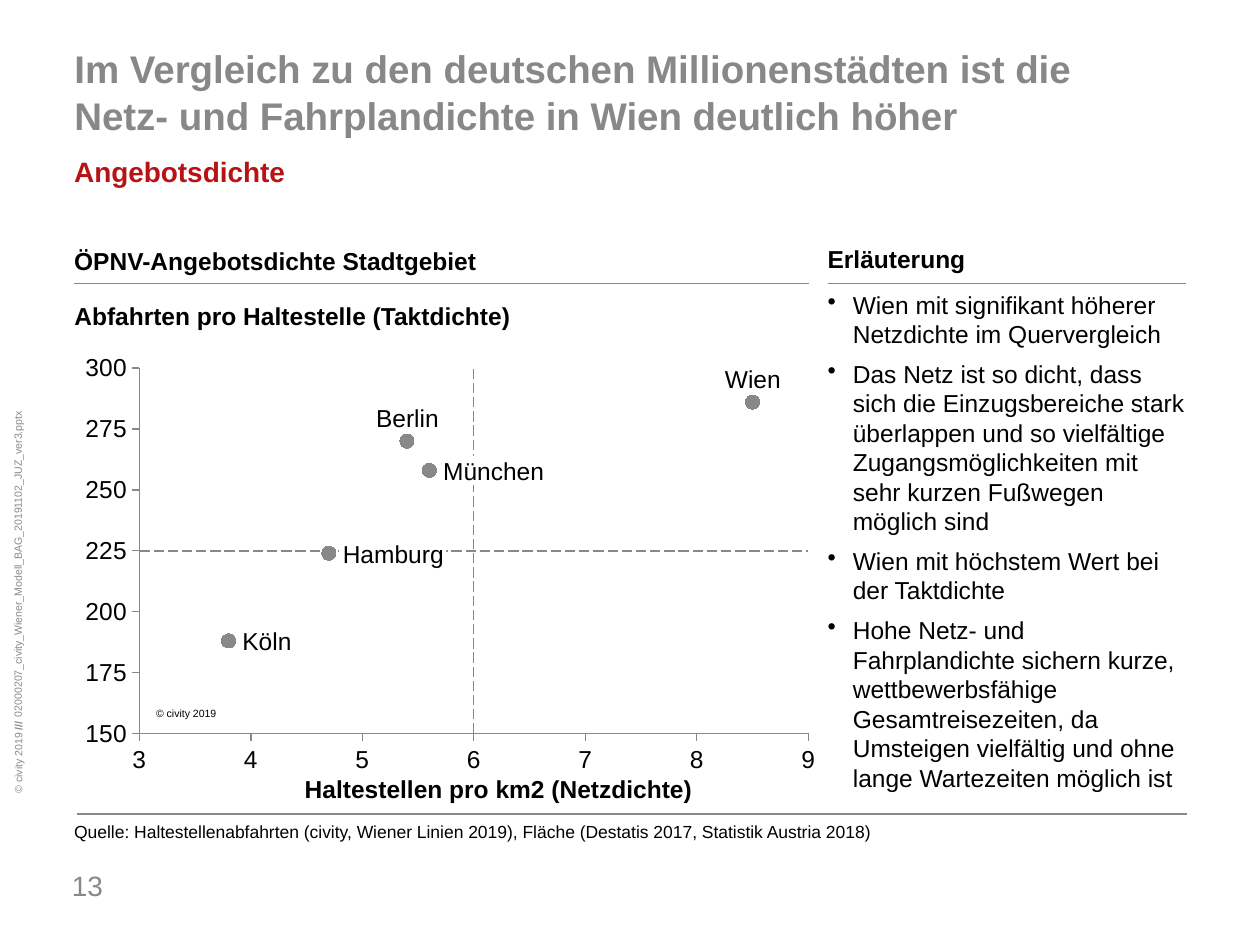
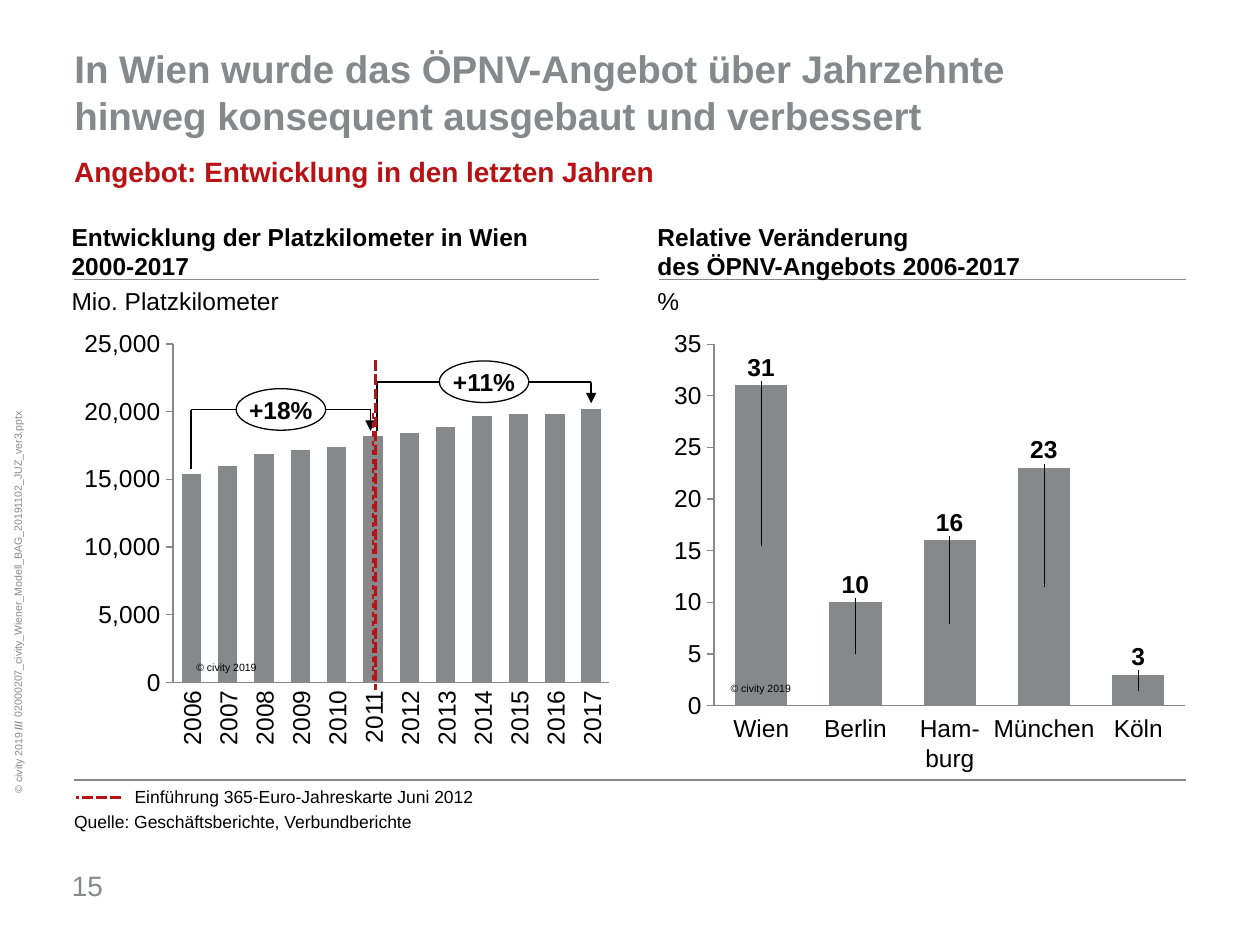
from dataclasses import dataclass
from lxml.etree import SubElement
from pptx import Presentation
from pptx.chart.data import CategoryChartData, XyChartData
from pptx.dml.color import RGBColor
from pptx.enum.chart import (XL_CHART_TYPE, XL_LABEL_POSITION, XL_MARKER_STYLE,
                             XL_TICK_LABEL_POSITION, XL_TICK_MARK)
from pptx.enum.dml import MSO_LINE
from pptx.enum.shapes import MSO_CONNECTOR, MSO_SHAPE
from pptx.enum.text import MSO_ANCHOR, MSO_AUTO_SIZE, PP_ALIGN
from pptx.oxml import parse_xml
from pptx.oxml.ns import nsdecls, qn
from pptx.util import Inches, Pt


@dataclass(frozen=True)
class Theme:
    font: str = "Arial"
    grey: RGBColor = RGBColor(0x86, 0x88, 0x89)
    red: RGBColor = RGBColor(0xB9, 0x12, 0x15)
    black: RGBColor = RGBColor(0, 0, 0)
    white: RGBColor = RGBColor(255, 255, 255)
    title: int = 22
    subtitle: int = 16
    body: int = 14
    note: int = 10
    tiny: int = 6
    hairline: float = 0.75


@dataclass(frozen=True)
class Box:
    """A region on the grid of 10 columns by 7.5 rows."""
    x: float
    y: float
    w: float
    h: float

    def sub(self, dx, dy, w, h):
        return Box(self.x + dx, self.y + dy, w, h)

    def share(self, fx, fy, fw, fh):
        return self.sub(fx * self.w, fy * self.h, fw * self.w, fh * self.h)

    def emu(self):
        return [Inches(v) for v in (self.x, self.y, self.w, self.h)]


T = Theme()
COLS, ROWS = 10, 7.5
SLIDE = Box(0, 0, COLS, ROWS)
COPYRIGHT = "© civity 2019"
FILE_NAME = "02000207_civity_Wiener_Modell_BAG_20191102_JUZ_ver3.pptx"
PAD = (0.1, 0.05)
NO_PAD = (0, 0)
LABEL_H = 0.23


def add_run(p, text, size=T.body, color=T.black, bold=False):
    for i, line in enumerate(text.split("\n")):
        if i:
            p.add_line_break()
        r = p.add_run()
        r.text = line
        r.font.name, r.font.size, r.font.bold = T.font, Pt(size), bold
        r.font.color.rgb = color


def set_frame(tf, pad=PAD, wrap=True, anchor=MSO_ANCHOR.TOP):
    tf.word_wrap, tf.auto_size, tf.vertical_anchor = wrap, MSO_AUTO_SIZE.NONE, anchor
    tf.margin_left = tf.margin_right = Inches(pad[0])
    tf.margin_top = tf.margin_bottom = Inches(pad[1])


def add_text(s, box, text, align=PP_ALIGN.LEFT, pad=PAD, wrap=True,
             anchor=MSO_ANCHOR.TOP, **font):
    sp = s.shapes.add_textbox(*box.emu())
    set_frame(sp.text_frame, pad, wrap, anchor)
    p = sp.text_frame.paragraphs[0]
    p.alignment = align
    add_run(p, text, **font)
    return sp


def add_line(s, start, end, color=T.grey, width=T.hairline, dash=None, arrow=False):
    line = s.shapes.add_connector(MSO_CONNECTOR.STRAIGHT,
                                  *[Inches(v) for v in (*start, *end)])
    line.line.color.rgb, line.line.width = color, Pt(width)
    if dash:
        line.line.dash_style = dash
    if arrow:
        SubElement(line.get_or_add_ln(), qn("a:tailEnd"), type="triangle")
    SubElement(line.element.spPr, qn("a:effectLst"))


def add_rule(s, x, y, w):
    add_line(s, (x, y), (x + w, y))


def add_frame(prs, title, subtitle, page):
    """Add a slide with the title, subtitle, page number and margin note all slides share."""
    s = prs.slides.add_slide(prs.slide_layouts[5])
    sp = s.shapes.title
    sp.left, sp.top, sp.width, sp.height = SLIDE.sub(0.49, 0.31, 8.92, 0.71).emu()
    set_frame(sp.text_frame)
    p = sp.text_frame.paragraphs[0]
    p.alignment = PP_ALIGN.LEFT
    add_run(p, title, T.title, T.grey, True)
    add_text(s, SLIDE.sub(0.49, 1.18, 7.89, 0.32), subtitle,
             size=T.subtitle, color=T.red, bold=True)
    add_text(s, SLIDE.sub(0.57, 6.89, 0.44, 0.27), page, pad=NO_PAD, wrap=False,
             anchor=MSO_ANCHOR.MIDDLE, size=T.subtitle, color=T.grey)
    margin = dict(pad=NO_PAD, size=T.tiny, color=T.grey)
    file_note = add_text(s, SLIDE.sub(-1.85, 3.65, 3.98, 0.1), FILE_NAME, **margin)
    owner = add_text(s, SLIDE.sub(-0.18, 6, 0.65, 0.1), COPYRIGHT, PP_ALIGN.RIGHT, **margin)
    add_run(owner.text_frame.paragraphs[0], " ///", T.tiny, T.grey, True)
    file_note.rotation = owner.rotation = 270
    return s


def add_source(s, y, text):
    add_text(s, Box(0.49, y, 8.93, 0.27), text, size=T.note)


def add_copyright(s, x, y):
    add_text(s, Box(x, y, 0.69, 0.2), COPYRIGHT, wrap=False, size=T.tiny)


def style_axis(axis, scale=None, number_format=None):
    """Style an axis; without a scale (min, max, step) it is a bare line."""
    axis.has_major_gridlines = False
    axis.format.line.color.rgb, axis.format.line.width = T.grey, Pt(T.hairline)
    axis.minor_tick_mark = XL_TICK_MARK.NONE
    if scale is None:
        axis.major_tick_mark = XL_TICK_MARK.NONE
        axis.tick_label_position = XL_TICK_LABEL_POSITION.NONE
        return
    axis.major_tick_mark = XL_TICK_MARK.OUTSIDE
    axis.minimum_scale, axis.maximum_scale, axis.major_unit = scale
    labels = axis.tick_labels
    labels.number_format, labels.number_format_is_linked = number_format, False
    labels.font.size, labels.font.name = Pt(T.body), T.font
    labels.font.color.rgb = T.black


def manual_layout(**values):
    parts = "".join(f'<c:{k} val="{v}"/>' for k, v in values.items())
    return parse_xml(f'<c:layout {nsdecls("c")}><c:manualLayout>{parts}'
                     '</c:manualLayout></c:layout>')


def add_chart(s, box, kind, data, inner):
    """Add a plain chart whose plot area takes the shares in inner; return it and that area."""
    chart = s.shapes.add_chart(kind, *box.emu(), data).chart
    chart.has_legend = chart.has_title = False
    chart.font.name, chart.font.size = T.font, Pt(T.note)
    chart.font.color.rgb = T.black
    area = chart.element.find(".//" + qn("c:plotArea"))
    for old in area.findall(qn("c:layout")):
        area.remove(old)
    x, y, w, h = inner
    area.insert(0, manual_layout(layoutTarget="inner", xMode="edge", yMode="edge",
                                 x=x, y=y, w=w, h=h))
    return chart, box.share(*inner)


def add_columns(s, box, values, scale, gap, inner):
    data = CategoryChartData()
    data.categories = [str(i + 1) for i in range(len(values))]
    data.add_series("Series 1", values)
    chart, plot_box = add_chart(s, box, XL_CHART_TYPE.COLUMN_STACKED, data, inner)
    style_axis(chart.category_axis)
    style_axis(chart.value_axis, scale, '#,##0;"-"#,##0')
    plot = chart.plots[0]
    plot.gap_width, plot.overlap, plot.vary_by_categories = gap, 100, False
    fill = plot.series[0].format.fill
    fill.solid()
    fill.fore_color.rgb = T.grey
    step = plot_box.w / len(values)
    centres = [plot_box.x + step * (i + 0.5) for i in range(len(values))]
    return chart, centres


def label_above_columns(chart, values, top, plot_share):
    """Lift each value label from the middle of its column to just above it."""
    for i, value in enumerate(values):
        label = chart.plots[0].series[0].points[i].data_label
        label.position = XL_LABEL_POSITION.CENTER
        label.font.size, label.font.bold, label.font.name = Pt(T.body), True, T.font
        label.font.color.rgb = T.black
        lift = value / top * plot_share / 2 + 0.045
        dlbl = chart.element.findall(".//" + qn("c:dLbl"))[i]
        dlbl.insert(1, manual_layout(x=0, y=round(-lift, 3)))


def add_density_chart(s, box):
    """Scatter of network and timetable density, with its headings, guides and city names."""
    cities = [("München", 5.6, 258, 0.85, False), ("Wien", 8.5, 286, 0.5, True),
              ("Berlin", 5.4, 270, 0.55, True), ("Köln", 3.8, 188, 0.44, False),
              ("Hamburg", 4.7, 224, 0.85, False)]
    x_scale, y_scale = (3, 9, 1), (150, 300, 25)
    data = XyChartData()
    series = data.add_series("Series 1")
    for _, x, y, _, _ in cities:
        series.add_data_point(x, y)
    chart, plot = add_chart(s, box.sub(0, 0.88, 6.16, 3.45), XL_CHART_TYPE.XY_SCATTER,
                            data, (0.1, 0.041, 0.862, 0.841))
    style_axis(chart.category_axis, x_scale, '0;"-"0')
    style_axis(chart.value_axis, y_scale, '0;"-"0')
    chart.plots[0].vary_by_categories = False
    dots = chart.plots[0].series[0]
    dots.smooth = False
    dots.format.line.fill.background()
    dots.marker.style, dots.marker.size = XL_MARKER_STYLE.CIRCLE, 8
    dots.marker.format.fill.solid()
    dots.marker.format.fill.fore_color.rgb = T.grey
    dots.marker.format.line.color.rgb = T.grey

    mid_x, mid_y = plot.x + plot.w / 2, plot.y + plot.h / 2
    add_line(s, (plot.x, mid_y), (plot.x + plot.w, mid_y), dash=MSO_LINE.LONG_DASH)
    add_line(s, (mid_x, plot.y + plot.h), (mid_x, plot.y), dash=MSO_LINE.LONG_DASH)
    for name, x, y, w, above in cities:
        px = plot.x + plot.w * (x - x_scale[0]) / (x_scale[1] - x_scale[0])
        py = plot.y + plot.h * (y_scale[1] - y) / (y_scale[1] - y_scale[0])
        spot = Box(px - w / 2, py - 0.3, w, LABEL_H) if above else \
            Box(px + 0.08, py - LABEL_H / 2, w, LABEL_H)
        sp = add_text(s, spot, name, pad=(0.03, 0), wrap=False, anchor=MSO_ANCHOR.MIDDLE)
        if not above:
            sp.fill.solid()
            sp.fill.fore_color.rgb = T.white

    add_text(s, box.sub(0, 0, 5.3, 0.39), "ÖPNV-Angebotsdichte Stadtgebiet", bold=True)
    add_rule(s, box.x + 0.1, box.y + 0.35, 5.83)
    add_text(s, box.sub(0.1, 0.49, 3.44, LABEL_H), "Abfahrten pro Haltestelle (Taktdichte)",
             pad=NO_PAD, wrap=False, anchor=MSO_ANCHOR.BOTTOM, bold=True)
    add_text(s, box.sub(1.83, 4.19, 3.29, 0.34), "Haltestellen pro km2 (Netzdichte)",
             wrap=False, bold=True)
    add_copyright(s, box.x + 0.65, box.y + 3.66)


def add_explanation(s, box, bullets):
    add_text(s, box.sub(0, -0.04, 2.94, 0.39), "Erläuterung",
             anchor=MSO_ANCHOR.MIDDLE, bold=True)
    add_rule(s, box.x + 0.1, box.y + 0.35, 2.84)
    sp = s.shapes.add_textbox(*box.sub(0, 0.35, box.w, box.h - 0.35).emu())
    tf = sp.text_frame
    set_frame(tf)
    for i, text in enumerate(bullets):
        p = tf.add_paragraph() if i else tf.paragraphs[0]
        ppr = p._p.get_or_add_pPr()
        ppr.set("marL", str(Inches(0.2)))
        ppr.set("indent", str(-Inches(0.2)))
        SubElement(ppr, qn("a:buChar"), char="•")
        if i:
            p.space_before = Pt(6)
        add_run(p, text)


def add_panel_heading(s, box, heading, unit):
    sp = add_text(s, box.sub(0, 0, 4.3, 0.85), heading, bold=True)
    p = sp.text_frame.add_paragraph()
    p.space_before = Pt(3)
    add_run(p, unit)


def add_growth(s, start, top, end, text):
    """Bracket from start up to top and down to end, with the growth in an ellipse."""
    corners = [start, (start[0], top), (end[0], top), end]
    for i in range(3):
        add_line(s, corners[i], corners[i + 1], T.black, 1, arrow=i == 2)
    w, h = 0.71, 0.33
    spot = Box((start[0] + end[0] - w) / 2, top - h / 2, w, h)
    sp = s.shapes.add_shape(MSO_SHAPE.OVAL, *spot.emu())
    sp.shadow.inherit = False
    sp.fill.solid()
    sp.fill.fore_color.rgb = T.white
    sp.line.color.rgb, sp.line.width = T.black, Pt(T.hairline)
    set_frame(sp.text_frame, NO_PAD, False, MSO_ANCHOR.MIDDLE)
    p = sp.text_frame.paragraphs[0]
    p.alignment = PP_ALIGN.CENTER
    add_run(p, text, bold=True)


def add_history(s, box):
    """Columns of seat kilometres by year, with growth brackets and the fare reform."""
    seat_km = [15400, 16000, 16900, 17200, 17400, 18200,
               18400, 18900, 19700, 19800, 19800, 20200]
    _, centres = add_columns(s, box.sub(0.02, 0.88, 4.44, 2.97), seat_km, (0, 25000, 5000),
                             87, (0.199, 0.047, 0.78, 0.905))
    for i, x in enumerate(centres):
        sp = add_text(s, Box(x - LABEL_H / 2, box.y + 3.77, LABEL_H, 0.43), str(2006 + i),
                      PP_ALIGN.RIGHT, NO_PAD, False, MSO_ANCHOR.MIDDLE)
        sp.element.txBody.bodyPr.set("vert", "vert270")
    first, reform, last = centres[0], centres[5], centres[-1]
    add_growth(s, (first, box.y + 2.01), box.y + 1.54, (reform - 0.02, box.y + 1.71), "+18%")
    add_growth(s, (reform + 0.03, box.y + 1.71), box.y + 1.32, (last, box.y + 1.49), "+11%")
    add_line(s, (reform, box.y + 3.69), (reform, box.y + 1.57), T.red, dash=MSO_LINE.DASH)
    add_rule(s, box.x + 0.12, box.y + 0.51, 4.16)
    add_panel_heading(s, box, "Entwicklung der Platzkilometer in Wien\n2000-2017",
                      "Mio. Platzkilometer")
    add_line(s, (reform + 0.02, box.y + 1.15), (reform + 0.02, box.y + 3.77),
             T.red, 2, MSO_LINE.SQUARE_DOT)
    add_copyright(s, box.x + 0.99, box.y + 3.49)


def add_change_by_city(s, box):
    changes = {"Wien": 31, "Berlin": 10, "Ham-\nburg": 16, "München": 23, "Köln": 3}
    values = list(changes.values())
    chart, centres = add_columns(s, box.sub(0.04, 0.88, 4.34, 3.15), values, (0, 35, 5),
                                 80, (0.117, 0.045, 0.862, 0.911))
    label_above_columns(chart, values, 35, 0.911)
    for x, city in zip(centres, changes):
        add_text(s, Box(x - 0.42, box.y + 3.95, 0.84, 2 * LABEL_H), city,
                 PP_ALIGN.CENTER, NO_PAD)
    add_rule(s, box.x + 0.11, box.y + 0.51, 4.18)
    add_panel_heading(s, box, "Relative Veränderung\ndes ÖPNV-Angebots 2006-2017", "%")
    add_copyright(s, box.x + 0.58, box.y + 3.65)


def density_slide(prs):
    s = add_frame(prs, "Im Vergleich zu den deutschen Millionenstädten ist die "
                  "Netz- und Fahrplandichte in Wien deutlich höher", "Angebotsdichte", "13")
    add_density_chart(s, SLIDE.sub(0.49, 1.9, 6.16, 4.5))
    add_explanation(s, SLIDE.sub(6.47, 1.9, 3.05, 4.44), [
        "Wien mit signifikant höherer Netzdichte im Quervergleich",
        "Das Netz ist so dicht, dass sich die Einzugsbereiche stark überlappen und so "
        "vielfältige Zugangsmöglichkeiten mit sehr kurzen Fußwegen möglich sind",
        "Wien mit höchstem Wert bei der Taktdichte",
        "Hohe Netz- und Fahrplandichte sichern kurze, wettbewerbsfähige "
        "Gesamtreisezeiten, da Umsteigen vielfältig und ohne lange Wartezeiten möglich ist"])
    add_rule(s, 0.61, 6.46, 8.81)
    add_source(s, 6.47, "Quelle: Haltestellenabfahrten (civity, Wiener Linien 2019), "
               "Fläche (Destatis 2017, Statistik Austria 2018)")


def development_slide(prs):
    s = add_frame(prs, "In Wien wurde das ÖPNV-Angebot über Jahrzehnte\n"
                  "hinweg konsequent ausgebaut und verbessert",
                  "Angebot: Entwicklung in den letzten Jahren", "15")
    add_history(s, SLIDE.sub(0.47, 1.71, 4.46, 4.2))
    add_change_by_city(s, SLIDE.sub(5.12, 1.71, 4.38, 4.42))
    add_rule(s, 0.59, 6.19, 8.82)
    add_line(s, (0.96, 6.33), (0.6, 6.33), T.red, 2, MSO_LINE.SQUARE_DOT)
    add_text(s, SLIDE.sub(0.97, 6.19, 4.59, 0.27), "Einführung 365-Euro-Jahreskarte Juni 2012",
             anchor=MSO_ANCHOR.MIDDLE, size=T.note)
    add_source(s, 6.39, "Quelle: Geschäftsberichte, Verbundberichte")


def main():
    prs = Presentation()
    prs.slide_width, prs.slide_height = Inches(COLS), Inches(ROWS)
    density_slide(prs)
    development_slide(prs)
    prs.save("out.pptx")


if __name__ == "__main__":
    main()
